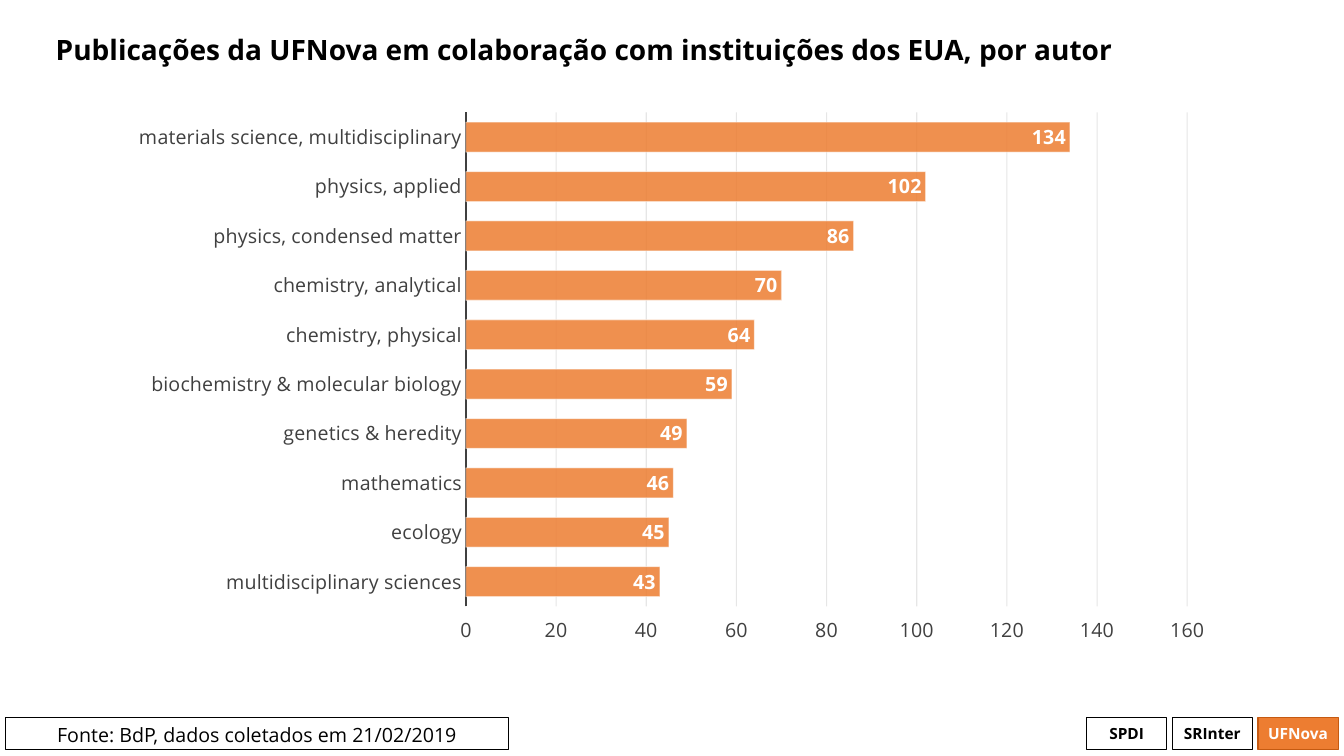
from lxml import etree
from pptx import Presentation
from pptx.chart.data import CategoryChartData
from pptx.dml.color import RGBColor
from pptx.enum.chart import (XL_CHART_TYPE, XL_LABEL_POSITION,
                             XL_TICK_LABEL_POSITION, XL_TICK_MARK)
from pptx.enum.shapes import MSO_SHAPE
from pptx.enum.text import MSO_ANCHOR, MSO_AUTO_SIZE, PP_ALIGN
from pptx.oxml import parse_xml
from pptx.oxml.ns import nsdecls, qn
from pptx.util import Pt

BAR_CLUSTERED = XL_CHART_TYPE.BAR_CLUSTERED
INSIDE_END = XL_LABEL_POSITION.INSIDE_END
NO_TICK = XL_TICK_MARK.NONE
LABELS_HIGH = XL_TICK_LABEL_POSITION.HIGH
RECTANGLE = MSO_SHAPE.RECTANGLE
MIDDLE, TOP = MSO_ANCHOR.MIDDLE, MSO_ANCHOR.TOP
LEFT, CENTER = PP_ALIGN.LEFT, PP_ALIGN.CENTER
NO_AUTOFIT = MSO_AUTO_SIZE.NONE

FONT = "Open Sans"
BLACK, WHITE, GREY = "000000", "FFFFFF", "404040"
ORANGE, DARK_ORANGE, GRID = "ED7D31", "C55A11", "0D0D0D"

PUBLICATIONS = {
    "materials science, multidisciplinary": 134,
    "physics, applied": 102,
    "physics, condensed matter": 86,
    "chemistry, analytical": 70,
    "chemistry, physical": 64,
    "biochemistry & molecular biology": 59,
    "genetics & heredity": 49,
    "mathematics": 46,
    "ecology": 45,
    "multidisciplinary sciences": 43,
}
# Inner plot area as fractions of the chart frame
PLOT_LAYOUT = {"x": 0.315, "y": 0.022, "w": 0.65, "h": 0.891}

# Footer tabs: name, fill, line, text colour
TABS = [
    ("SPDI", None, BLACK, BLACK),
    ("SRInter", None, BLACK, BLACK),
    ("UFNova", ORANGE, DARK_ORANGE, WHITE),
]
FOOTER_TOP, FOOTER_HEIGHT = 512.6, 23
TAB_LEFT, TAB_STEP, TAB_WIDTH = 776.2, 61.2, 57.2


def color(hex_value):
    return RGBColor.from_string(hex_value)


def set_attributes(target, values):
    for name, value in values.items():
        setattr(target, name, value)


def format_font(font, size, hex_value, bold=False):
    set_attributes(font, {"name": FONT, "size": Pt(size), "bold": bold})
    font.color.rgb = color(hex_value)


def format_line(line, hex_value, width=0.75):
    line.color.rgb = color(hex_value)
    line.width = Pt(width)


def write_text(shape, text, size, hex_value, bold, alignment, anchor):
    frame = shape.text_frame
    set_attributes(frame, {"word_wrap": True, "auto_size": NO_AUTOFIT,
                           "vertical_anchor": anchor})
    paragraph = frame.paragraphs[0]
    paragraph.alignment = alignment
    run = paragraph.add_run()
    run.text = text
    format_font(run.font, size, hex_value, bold)
    return frame


def add_title(slide, text):
    title = slide.shapes.title
    set_attributes(title, {"left": Pt(32.6), "top": Pt(4.3),
                           "width": Pt(893.5), "height": Pt(65.5)})
    frame = write_text(title, text, 20, BLACK, True, LEFT, MIDDLE)
    frame.paragraphs[0].line_spacing = 0.9


def add_box(slide, left, width, text, size, fill=None, line=BLACK,
            text_color=BLACK, bold=False, anchor=TOP):
    box = slide.shapes.add_shape(RECTANGLE, Pt(left), Pt(FOOTER_TOP),
                                 Pt(width), Pt(FOOTER_HEIGHT))
    box.shadow.inherit = False
    if fill:
        box.fill.solid()
        box.fill.fore_color.rgb = color(fill)
    else:
        box.fill.background()
    format_line(box.line, line)
    frame = write_text(box, text, size, text_color, bold, CENTER, anchor)
    set_attributes(frame, {"margin_left": Pt(3.6), "margin_right": Pt(3.6)})


def set_opacity(chart, parent, percent):
    for node in chart.element.xpath(f".//{parent}/a:solidFill/a:srgbClr"):
        etree.SubElement(node, qn("a:alpha")).set("val", str(percent * 1000))


def set_plot_layout(chart):
    plot_area = chart.element.find(".//" + qn("c:plotArea"))
    for layout in plot_area.findall(qn("c:layout")):
        plot_area.remove(layout)
    modes = "".join(f'<c:{side}Mode val="edge"/>' for side in "xy")
    sizes = "".join(f'<c:{side} val="{value}"/>'
                    for side, value in PLOT_LAYOUT.items())
    plot_area.insert(0, parse_xml(
        f'<c:layout {nsdecls("c")}><c:manualLayout>'
        f'<c:layoutTarget val="inner"/>{modes}{sizes}'
        f'</c:manualLayout></c:layout>'))


def set_chart_background(chart, hex_value):
    fill = f'<a:solidFill><a:srgbClr val="{hex_value}"/></a:solidFill>'
    chart.element.find(qn("c:chart")).addnext(parse_xml(
        f'<c:spPr {nsdecls("c", "a")}>{fill}'
        f'<a:ln w="{Pt(0.75)}">{fill}</a:ln></c:spPr>'))


def format_axes(chart):
    category_axis, value_axis = chart.category_axis, chart.value_axis
    for axis in (category_axis, value_axis):
        set_attributes(axis, {"major_tick_mark": NO_TICK,
                              "minor_tick_mark": NO_TICK})
        format_font(axis.tick_labels.font, 14, GREY)
    # First category on top, values along the bottom
    category_axis.reverse_order = True
    format_line(category_axis.format.line, GREY, 1.5)
    set_attributes(value_axis, {"minimum_scale": 0, "maximum_scale": 160,
                                "major_unit": 20,
                                "has_major_gridlines": True,
                                "tick_label_position": LABELS_HIGH})
    value_axis.format.line.fill.background()
    format_line(value_axis.major_gridlines.format.line, GRID)


def format_bars(plot):
    set_attributes(plot, {"gap_width": 65, "vary_by_categories": False})
    series = plot.series[0]
    series.invert_if_negative = False
    series.format.fill.solid()
    series.format.fill.fore_color.rgb = color(ORANGE)
    format_line(series.format.line, WHITE)
    labels = series.data_labels
    set_attributes(labels, {"show_value": True, "position": INSIDE_END})
    format_font(labels.font, 14, WHITE, True)


def add_publication_chart(slide):
    data = CategoryChartData()
    data.categories = list(PUBLICATIONS)
    data.add_series("Series 1", list(PUBLICATIONS.values()))
    chart = slide.shapes.add_chart(BAR_CLUSTERED, Pt(82.8), Pt(71.3),
                                   Pt(793.4), Pt(396.7), data).chart
    set_attributes(chart, {"has_title": False, "has_legend": False})
    format_font(chart.font, 14, BLACK)
    format_axes(chart)
    format_bars(chart.plots[0])
    set_plot_layout(chart)
    set_chart_background(chart, WHITE)
    set_opacity(chart, "c:ser/c:spPr", 85)
    set_opacity(chart, "c:ser/c:spPr/a:ln", 50)
    set_opacity(chart, "c:majorGridlines/c:spPr/a:ln", 10)


def main():
    presentation = Presentation()
    set_attributes(presentation, {"slide_width": Pt(960),
                                  "slide_height": Pt(540)})
    slide = presentation.slides.add_slide(presentation.slide_layouts[5])

    # Footer
    for index, (name, fill, line, text_color) in enumerate(TABS):
        add_box(slide, TAB_LEFT + index * TAB_STEP, TAB_WIDTH, name, 11,
                fill, line, text_color, True, MIDDLE)
    add_box(slide, 4, 359.3, "Fonte: BdP, dados coletados em 21/02/2019", 14)

    # Title and chart
    add_title(slide, "Publicações da UFNova em colaboração com instituições "
                     "dos EUA, por autor")
    add_publication_chart(slide)
    presentation.save("out.pptx")


if __name__ == "__main__":
    main()
